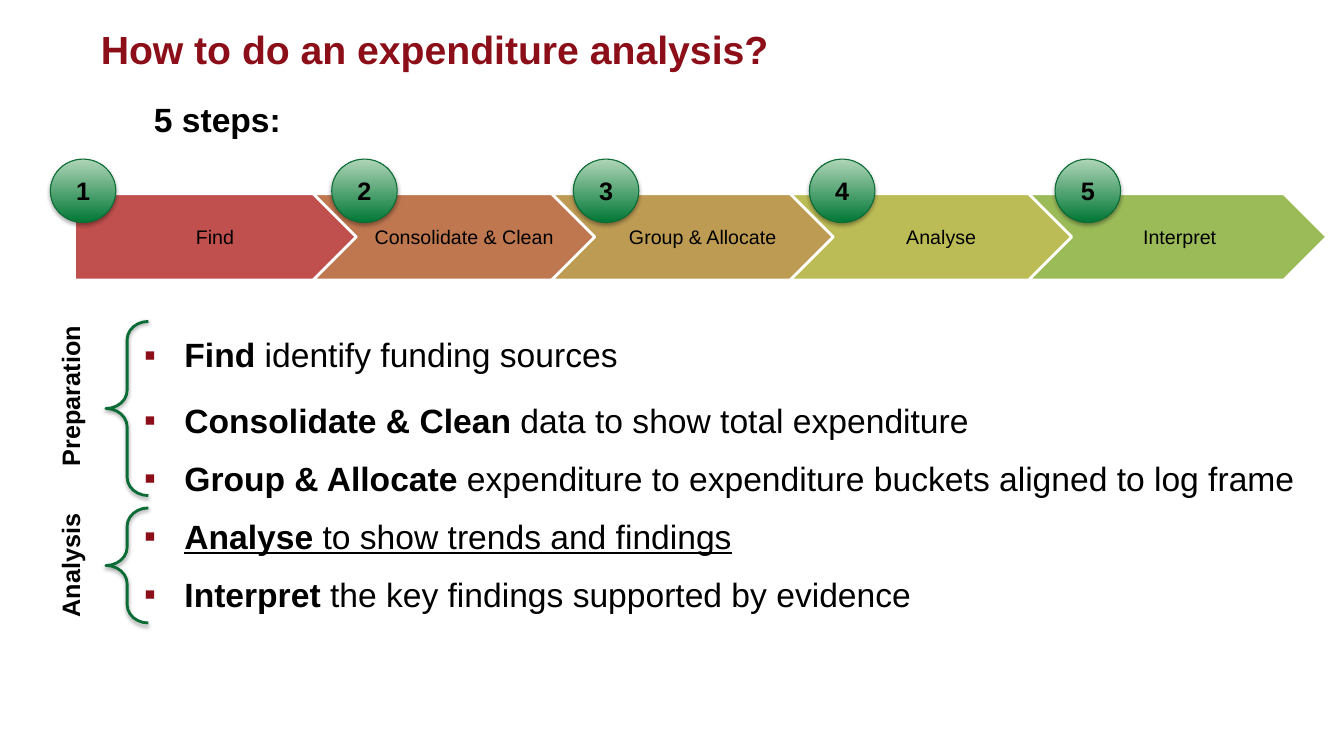
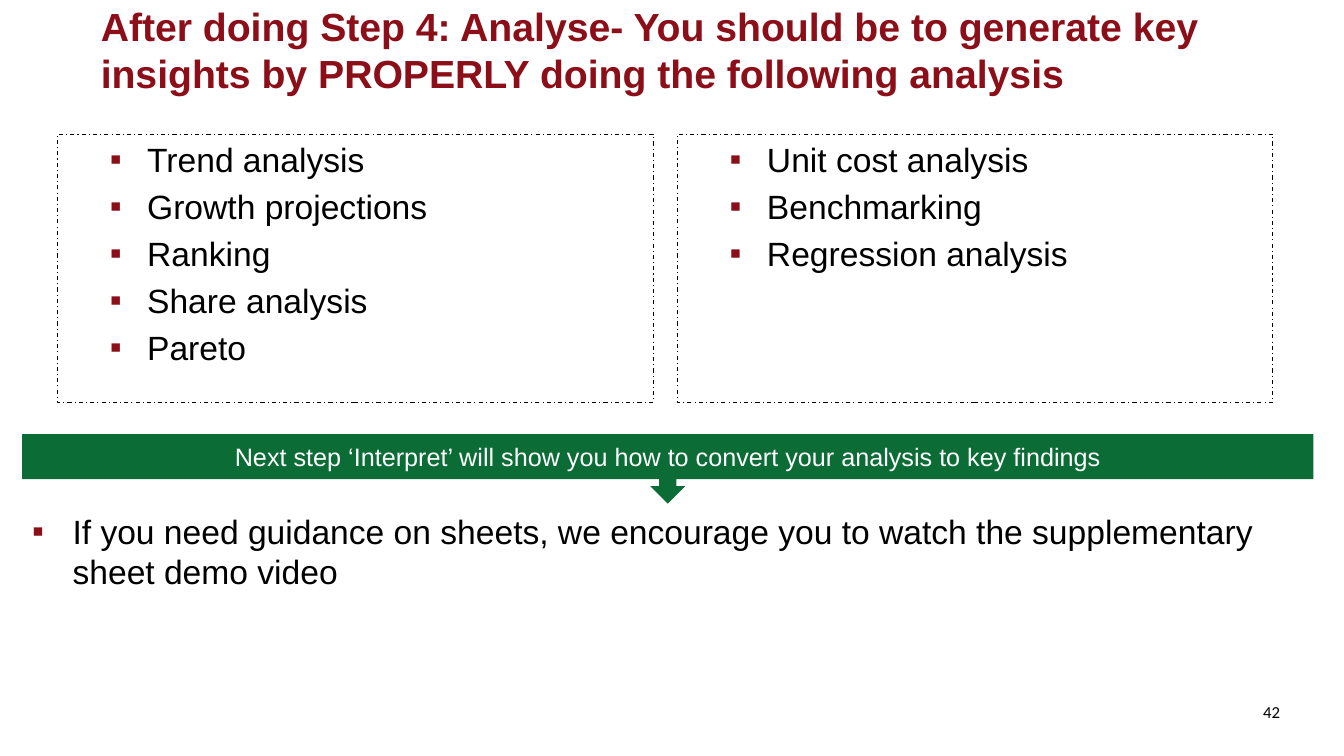
from lxml.etree import SubElement
from pptx import Presentation
from pptx.dml.color import RGBColor
from pptx.enum.dml import MSO_LINE
from pptx.enum.shapes import MSO_SHAPE
from pptx.enum.text import MSO_ANCHOR, PP_ALIGN
from pptx.oxml.ns import qn
from pptx.util import Cm, Pt

MAROON = RGBColor(0x8B, 0x0E, 0x18)
GREEN = RGBColor(0x0B, 0x6C, 0x36)
BADGE_DARK = RGBColor(0x00, 0x77, 0x35)
BADGE_LIGHT = RGBColor(0xAF, 0xD5, 0xB7)
BLACK = RGBColor(0x00, 0x00, 0x00)
WHITE = RGBColor(0xFF, 0xFF, 0xFF)

STEPS = [
    ("Find", RGBColor(0xC0, 0x50, 0x4D), 1.27),
    ("Consolidate & Clean", RGBColor(0xBF, 0x77, 0x50), 8.36),
    ("Group & Allocate", RGBColor(0xBD, 0x9B, 0x53), 14.45),
    ("Analyse", RGBColor(0xBC, 0xBC, 0x56), 20.4),
    ("Interpret", RGBColor(0x9B, 0xBB, 0x59), 26.59),
]
STEP_PITCH = 6.01

EXPLANATIONS = [
    ("Find", " identify funding sources", 0),
    ("Consolidate & Clean", " data to show total expenditure", 12),
    ("Group & Allocate", " expenditure to expenditure buckets aligned to log frame", 6.3),
    ("Analyse", " to show trends and findings", 6.3),
    ("Interpret", " the key findings supported by evidence", 6.3),
]

PHASES = [("Preparation", 9.98, 8.1, 4.39), ("Analysis", 14.25, 12.8, 2.9)]

ANALYSES = [
    ["Trend analysis", "Growth projections", "Ranking", "Share analysis", "Pareto"],
    ["Unit cost analysis", "Benchmarking", "Regression analysis"],
]


def style(paragraph, size, color=BLACK, bold=False, align=PP_ALIGN.LEFT, name="Arial"):
    paragraph.alignment = align
    font = paragraph.font
    font.name = name
    font.size = Pt(size)
    font.bold = bold
    font.color.rgb = color


def add_box(slide, left, top, width, height, anchor=MSO_ANCHOR.TOP):
    box = slide.shapes.add_textbox(Cm(left), Cm(top), Cm(width), Cm(height))
    box.text_frame.word_wrap = True
    box.text_frame.vertical_anchor = anchor
    return box


def add_label(slide, text, bounds, size, anchor=MSO_ANCHOR.TOP, **font):
    label = add_box(slide, *bounds, anchor)
    paragraph = label.text_frame.paragraphs[0]
    paragraph.text = text
    style(paragraph, size, **font)
    return label


def add_title(slide, text):
    title = add_label(slide, text, (2.29, 0.67, 30.56, 1.14), 28, MSO_ANCHOR.MIDDLE,
                      color=MAROON, bold=True)
    title.text_frame.paragraphs[0].line_spacing = Pt(33.6)


def add_shape(slide, preset, left, top, width, height, fill=None, line=None, weight=0.75):
    shape = slide.shapes.add_shape(preset, Cm(left), Cm(top), Cm(width), Cm(height))
    shape.shadow.inherit = False
    if fill is None:
        shape.fill.background()
    else:
        shape.fill.solid()
        shape.fill.fore_color.rgb = fill
    if line is None:
        shape.line.fill.background()
    else:
        shape.line.color.rgb = line
        shape.line.width = Pt(weight)
    return shape


def caption(shape, text, size, **font):
    frame = shape.text_frame
    frame.word_wrap = True
    frame.vertical_anchor = MSO_ANCHOR.MIDDLE
    frame.paragraphs[0].text = text
    style(frame.paragraphs[0], size, align=PP_ALIGN.CENTER, **font)


def cast_shadow(shape, opacity):
    effects = shape.element.spPr.find(qn("a:effectLst"))
    shadow = SubElement(effects, qn("a:outerShdw"), blurRad=str(Pt(3.1)),
                        dist=str(Pt(1.7)), dir="5400000", rotWithShape="0")
    color = SubElement(shadow, qn("a:srgbClr"), val=str(BLACK))
    SubElement(color, qn("a:alpha"), val=str(opacity * 1000))


def add_bullet(frame, index, runs, margin, hanging, before=0, after=0):
    paragraph = frame.add_paragraph() if index else frame.paragraphs[0]
    properties = paragraph._p.get_or_add_pPr()
    properties.set("marL", str(Cm(margin)))
    properties.set("indent", str(-Cm(hanging)))
    color = SubElement(properties, qn("a:buClr"))
    SubElement(color, qn("a:srgbClr"), val=str(MAROON))
    SubElement(properties, qn("a:buFont"), typeface="Arial")
    SubElement(properties, qn("a:buChar"), char="▪")
    style(paragraph, 24)
    paragraph.line_spacing = Pt(28.8)
    paragraph.space_before = Pt(before if index else 0)
    paragraph.space_after = Pt(after)
    for text, bold in runs:
        run = paragraph.add_run()
        run.text = text
        if bold:
            run.font.bold = True
    return paragraph


def add_step_arrow(slide, index, name, color):
    preset = MSO_SHAPE.CHEVRON if index else MSO_SHAPE.PENTAGON
    arrow = add_shape(slide, preset, 1.88 + index * STEP_PITCH, 4.88, 7.52, 2.18, color, WHITE, 2)
    caption(arrow, name, 14)
    arrow.text_frame.margin_left = Cm(0.15)
    arrow.text_frame.margin_right = Cm(0.05)


def add_badge(slide, number, left):
    badge = add_shape(slide, MSO_SHAPE.OVAL, left, 4.01, 1.65, 1.6, BADGE_DARK, GREEN)
    badge.fill.gradient()
    badge.fill.gradient_angle = 90
    for stop, color in zip(badge.fill.gradient_stops, (BADGE_DARK, BADGE_LIGHT)):
        stop.color.rgb = color
    cast_shadow(badge, 35)
    caption(badge, str(number), 18, bold=True)


def add_phase(slide, name, label_middle, brace_top, brace_height):
    width, height = 4.4, 1.02
    bounds = (1.77 - width / 2, label_middle - height / 2, width, height)
    label = add_label(slide, name, bounds, 18, bold=True, align=PP_ALIGN.CENTER)
    label.rotation = 270
    brace = add_shape(slide, MSO_SHAPE.LEFT_BRACE, 2.67, brace_top, 1.07, brace_height,
                      line=GREEN, weight=2)
    brace.adjustments[0] = 0.43
    cast_shadow(brace, 38)


def add_analysis_panel(slide, left, analyses):
    panel = add_shape(slide, MSO_SHAPE.RECTANGLE, left, 3.38, 15.01, 6.76, line=BLACK)
    panel.line.dash_style = MSO_LINE.DASH_DOT
    panel.text_frame.word_wrap = True
    panel.text_frame.vertical_anchor = MSO_ANCHOR.TOP
    for index, analysis in enumerate(analyses):
        add_bullet(panel.text_frame, index, [(analysis, False)], 2.01, 0.94, before=4.8)


def build_steps(slide):
    add_title(slide, "How to do an expenditure analysis?")
    heading = add_label(slide, "5 steps:", (3.63, 2.38, 8, 1.3), 24, bold=True)
    heading.text_frame.paragraphs[0].line_spacing = Pt(28.8)
    explanations = add_box(slide, 2.29, 8.3, 30.73, 7.9).text_frame
    for index, (name, detail, before) in enumerate(EXPLANATIONS):
        bullet = add_bullet(explanations, index, [(name, True), (detail, False)],
                            2.11, 1.02, before, 6.3)
        if name == "Analyse":
            bullet.font.underline = True
    for index, (name, color, _) in enumerate(STEPS):
        add_step_arrow(slide, index, name, color)
    for phase in PHASES:
        add_phase(slide, *phase)
    for number, (_, _, badge_left) in enumerate(STEPS, 1):
        add_badge(slide, number, badge_left)


def build_insights(slide):
    add_title(slide, "After doing Step 4: Analyse- You should be to generate key insights "
                     "by PROPERLY doing the following analysis")
    for index, analyses in enumerate(ANALYSES):
        add_analysis_panel(slide, 1.45 + index * 15.62, analyses)
    next_step = add_shape(slide, MSO_SHAPE.DOWN_ARROW_CALLOUT, 0.56, 10.94, 32.54, 1.75, GREEN)
    caption(next_step, "Next step ‘Interpret’ will show you how to convert your analysis "
                       "to key findings", 18, color=WHITE)
    guidance = add_box(slide, 0.56, 12.75, 32.54, 4.01).text_frame
    add_bullet(guidance, 0, [("If you need guidance on sheets, we encourage you to watch the "
                              "supplementary sheet demo video", False)], 1.02, 1.02)
    add_label(slide, "42", (30.58, 17.55, 1.93, 0.99), 12, align=PP_ALIGN.RIGHT, name="Calibri")


def main():
    presentation = Presentation()
    presentation.slide_width = Cm(33.87)
    presentation.slide_height = Cm(19.05)
    blank = presentation.slide_layouts[6]
    for build in (build_steps, build_insights):
        build(presentation.slides.add_slide(blank))
    presentation.save("out.pptx")


if __name__ == "__main__":
    main()
